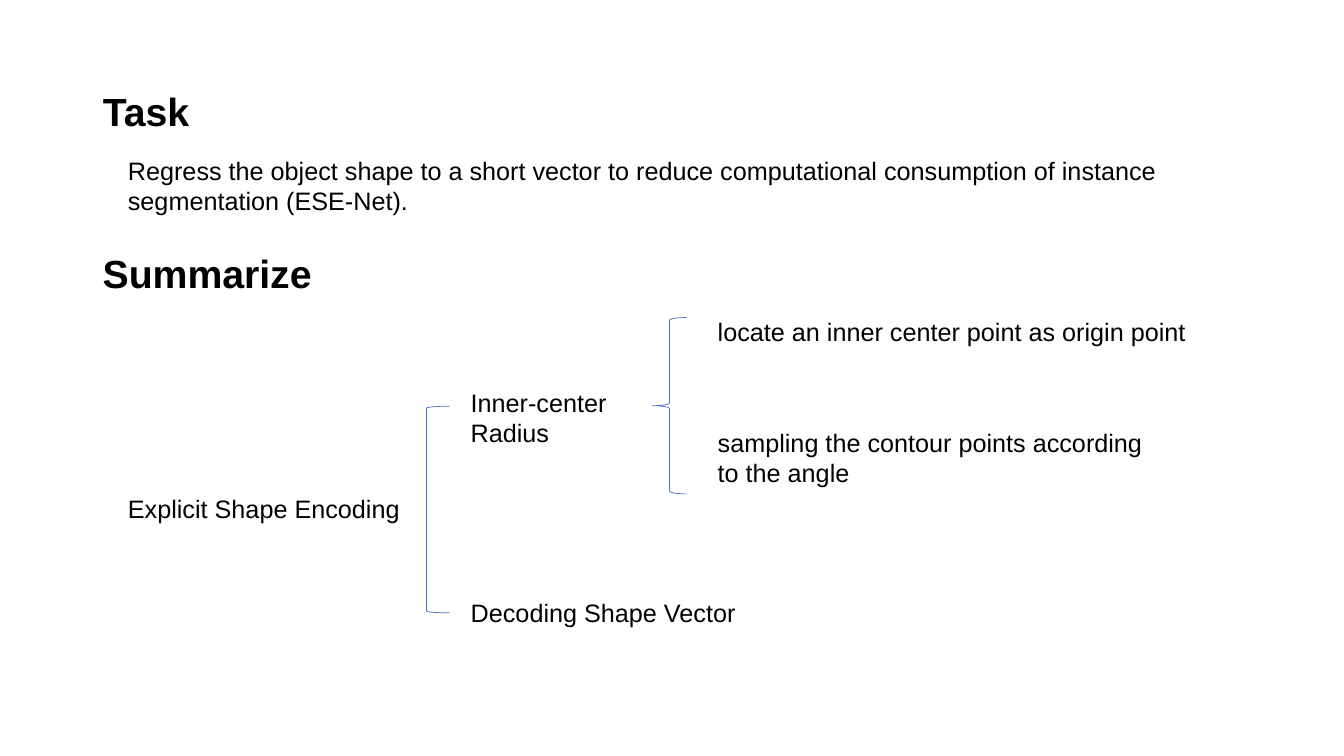
from dataclasses import dataclass

from pptx import Presentation
from pptx.dml.color import RGBColor
from pptx.enum.shapes import MSO_SHAPE as Preset
from pptx.enum.text import MSO_ANCHOR as Anchor, PP_ALIGN as Align
from pptx.util import Inches, Pt


@dataclass(frozen=True)
class Theme:
    font: str = "Arial"
    ink: RGBColor = RGBColor(0, 0, 0)
    accent: RGBColor = RGBColor(0x44, 0x72, 0xC4)
    heading: Pt = Pt(28)
    body: Pt = Pt(18)
    hairline: Pt = Pt(0.5)


THEME = Theme()

NOTES = [
    ("Regress the object shape to a short vector to reduce computational "
     "consumption of instance segmentation (ESE-Net).", 1.17, 1.49, 10.99, 0.71),
    ("Explicit Shape Encoding", 1.17, 4.84, 2.95, 0.4),
    ("Inner-center Radius", 4.57, 3.79, 1.7, 0.71),
    ("Decoding Shape Vector", 4.57, 5.88, 2.99, 0.4),
    ("locate an inner center point as origin point", 7.02, 3.09, 4.86, 0.4),
    ("sampling the contour points according to the angle", 7.02, 4.19, 4.56, 0.71),
]

BRACKETS = [
    (Preset.LEFT_BRACKET, 4.23, 4.03, 0.23, 2.05),
    (Preset.LEFT_BRACE, 6.47, 3.15, 0.34, 1.75),
]


def write(box, text, size, bold=False):
    frame = box.text_frame
    frame.text = text
    frame.word_wrap = True
    para = frame.paragraphs[0]
    para.alignment = Align.LEFT
    font = para.runs[0].font
    font.name = THEME.font
    font.size = size
    font.bold = bold
    font.color.rgb = THEME.ink


def add_title(page, text, left, top, width, height):
    title = page.shapes.title
    title.left, title.top = Inches(left), Inches(top)
    title.width, title.height = Inches(width), Inches(height)
    write(title, text, THEME.heading, bold=True)
    title.text_frame.vertical_anchor = Anchor.MIDDLE
    title.text_frame.paragraphs[0].line_spacing = 0.9


def add_text(page, text, left, top, width, height, size=THEME.body, bold=False):
    box = page.shapes.add_textbox(
        Inches(left), Inches(top), Inches(width), Inches(height))
    write(box, text, size, bold)


def add_bracket(page, preset, left, top, width, height):
    bracket = page.shapes.add_shape(
        preset, Inches(left), Inches(top), Inches(width), Inches(height))
    bracket.shadow.inherit = False
    bracket.fill.background()
    bracket.line.color.rgb = THEME.accent
    bracket.line.width = THEME.hairline


def main():
    deck = Presentation()
    deck.slide_width, deck.slide_height = Inches(13.33), Inches(7.5)
    page = deck.slides.add_slide(deck.slide_layouts[5])
    add_title(page, "Task", 0.92, 0.4, 11.5, 1.45)
    add_text(page, "Summarize", 0.92, 2.42, 2.45, 0.57, THEME.heading, bold=True)
    for note in NOTES:
        add_text(page, *note)
    for bracket in BRACKETS:
        add_bracket(page, *bracket)
    deck.save("out.pptx")


if __name__ == "__main__":
    main()
